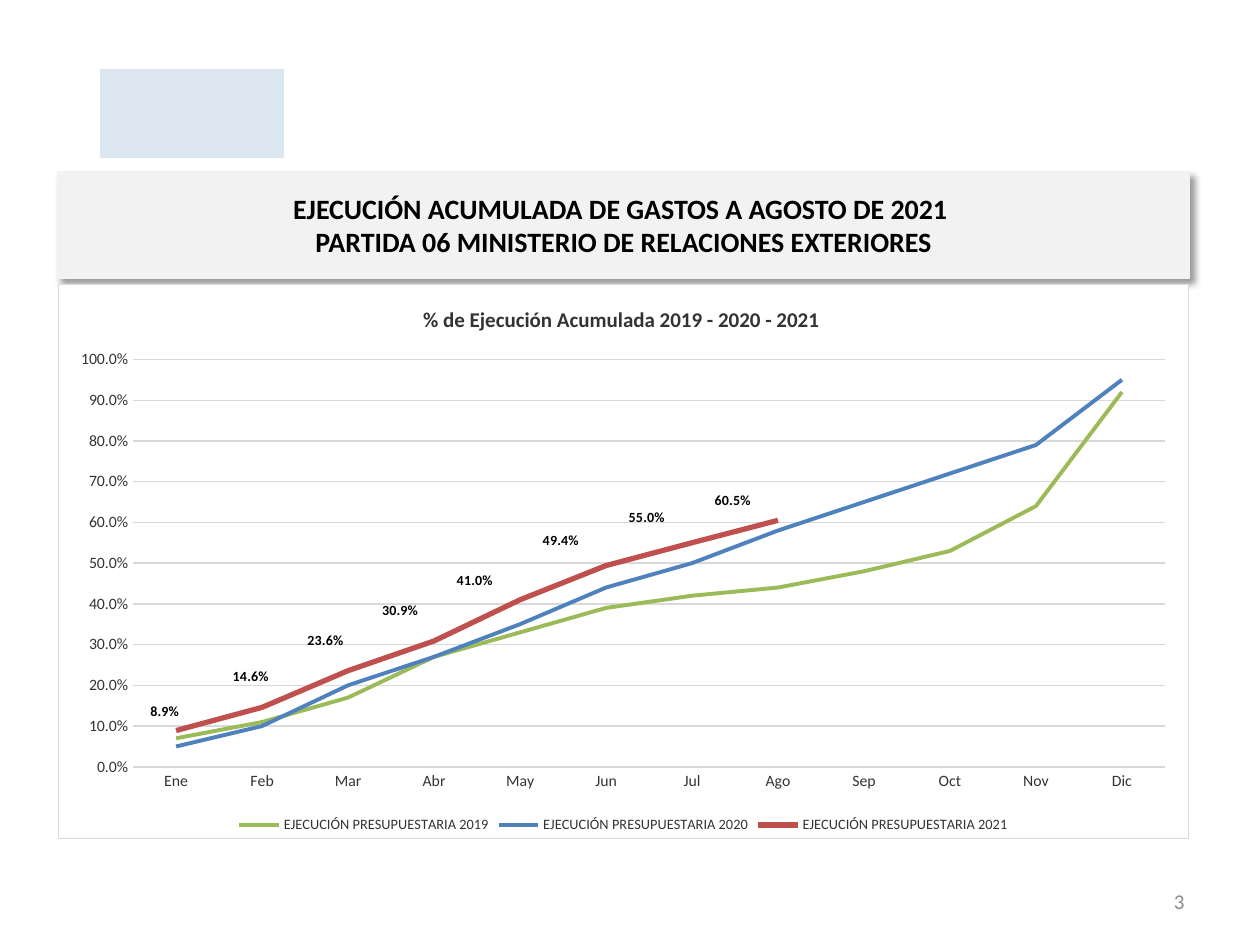
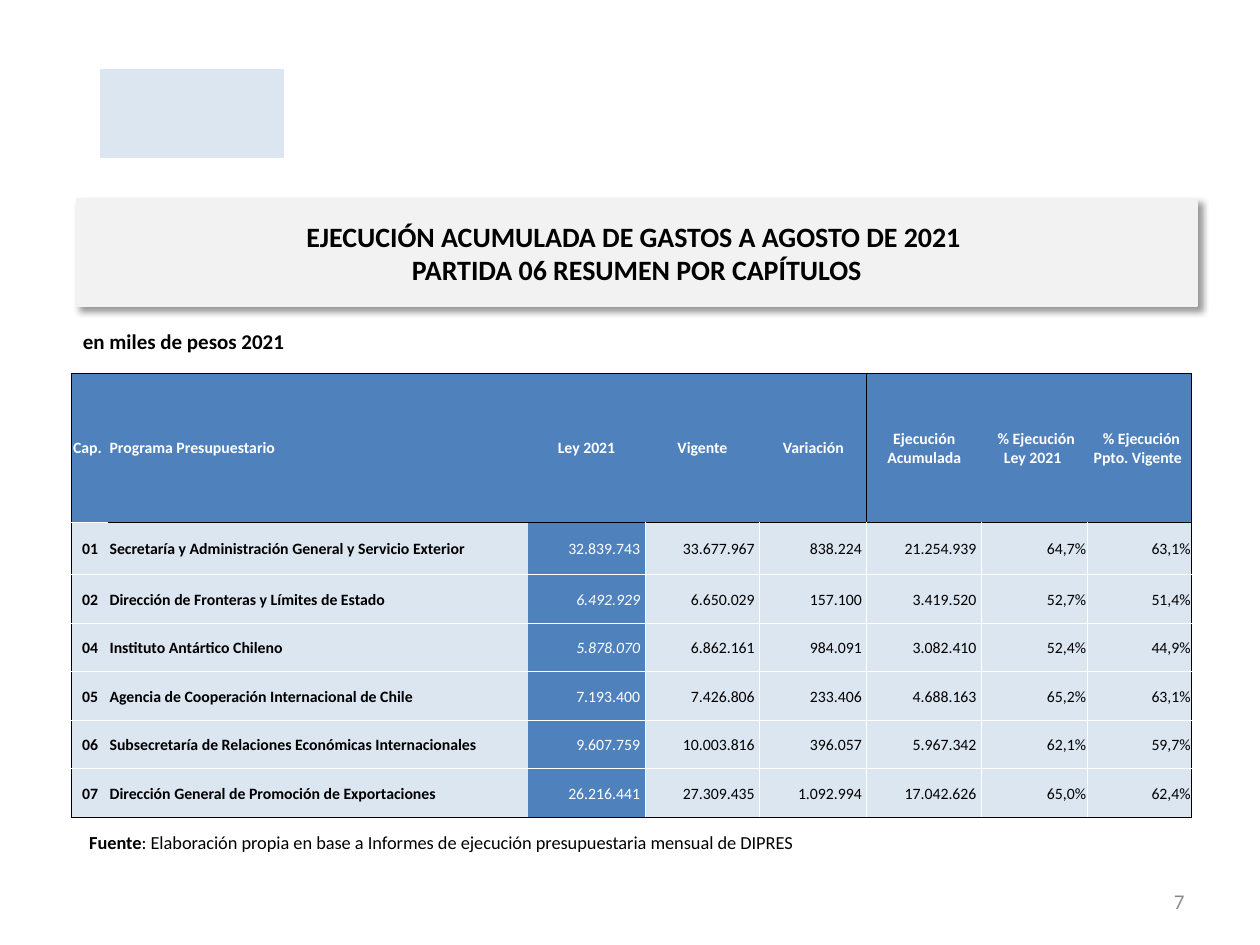
from pptx import Presentation, oxml
from pptx import util as u
from pptx.chart import data as chart_data
from pptx.dml.color import RGBColor
from pptx.enum import chart as charts
from pptx.enum import shapes, text
from pptx.oxml import ns

BLACK = RGBColor(0x00, 0x00, 0x00)
WHITE = RGBColor(0xFF, 0xFF, 0xFF)
BLUE = RGBColor(0x4F, 0x81, 0xBD)
GREEN = RGBColor(0x9B, 0xBB, 0x59)
RED = RGBColor(0xC0, 0x50, 0x4D)
PALE_BLUE = RGBColor(0xDC, 0xE6, 0xF1)
BAND_GRAY = RGBColor(0xF2, 0xF2, 0xF2)
RULE_GRAY = RGBColor(0xD9, 0xD9, 0xD9)
PAGE_GRAY = RGBColor(0x8C, 0x8C, 0x8C)
DARK_GRAY = RGBColor(0x33, 0x33, 0x33)

LEFT = text.PP_ALIGN.LEFT
CENTER = text.PP_ALIGN.CENTER
RIGHT = text.PP_ALIGN.RIGHT
BODY_FONT = "Calibri"
BAND_TITLE = "EJECUCIÓN ACUMULADA DE GASTOS A AGOSTO DE 2021 "

MONTHS = ["Ene", "Feb", "Mar", "Abr", "May", "Jun", "Jul", "Ago", "Sep", "Oct", "Nov", "Dic"]
YEARS = [
    ("2019", GREEN, 2.25, [0.07, 0.11, 0.17, 0.27, 0.33, 0.39, 0.42, 0.44, 0.48, 0.53, 0.64, 0.92]),
    ("2020", BLUE, 2.25, [0.05, 0.1, 0.2, 0.27, 0.35, 0.44, 0.5, 0.58, 0.65, 0.72, 0.79, 0.95]),
    ("2021", RED, 3, [0.089, 0.146, 0.236, 0.309, 0.41, 0.494, 0.55, 0.605]),
]
LABEL_SHIFTS = [(-0.01, -0.01), (-0.01, -0.03), (-0.02, -0.03), (-0.03, -0.03),
                (-0.04, -0.01), (-0.04, -0.02), (-0.04, -0.02), (-0.04, -0.01)]

HEADINGS = ["Cap.", "Programa Presupuestario", "Ley 2021", "Vigente", "Variación",
            "Ejecución Acumulada", " % Ejecución Ley 2021 ", " % Ejecución Ppto. Vigente "]
CHAPTERS = [
    ["01", "Secretaría y Administración General y Servicio Exterior",
     "32.839.743", "33.677.967", "838.224", "21.254.939", "64,7%", "63,1%"],
    ["02", "Dirección de Fronteras y Límites de Estado",
     "6.492.929", "6.650.029", "157.100", "3.419.520", "52,7%", "51,4%"],
    ["04", "Instituto Antártico Chileno",
     "5.878.070", "6.862.161", "984.091", "3.082.410", "52,4%", "44,9%"],
    ["05", "Agencia de Cooperación Internacional de Chile",
     "7.193.400", "7.426.806", "233.406", "4.688.163", "65,2%", "63,1%"],
    ["06", "Subsecretaría de Relaciones Económicas Internacionales",
     "9.607.759", "10.003.816", "396.057", "5.967.342", "62,1%", "59,7%"],
    ["07", "Dirección General de Promoción de Exportaciones",
     "26.216.441", "27.309.435", "1.092.994", "17.042.626", "65,0%", "62,4%"],
]
ITALIC_CHAPTERS = ("02", "04")
COLUMN_WIDTHS = [0.29, 3.33, 0.93, 0.91, 0.85, 0.91, 0.84, 0.83]
ROW_HEIGHTS = [1.19, 0.41, 0.39, 0.38, 0.39, 0.38, 0.39]


def make_xml(markup):
    return oxml.parse_xml(f"<root {ns.nsdecls('a', 'c')}>{markup}</root>")[0]


def set_font(font, size, color, bold=False, italic=False):
    font.name, font.size = BODY_FONT, u.Pt(size)
    font.bold, font.italic = bold, italic
    font.color.rgb = color


def write(paragraph, words, align=LEFT, **style):
    paragraph.alignment = align
    for number, line in enumerate(words.split("\n")):
        if number:
            paragraph.add_line_break()
        run = paragraph.add_run()
        run.text = line
        set_font(run.font, **style)


def manual_layout(inner=False, **parts):
    target = '<c:layoutTarget val="inner"/>' if inner else ""
    modes = '<c:xMode val="edge"/><c:yMode val="edge"/>' if inner else ""
    values = "".join(f'<c:{key} val="{value}"/>' for key, value in parts.items())
    return make_xml(f"<c:layout><c:manualLayout>{target}{modes}{values}</c:manualLayout></c:layout>")


def border_color(row, column, side):
    last_row, last_column = len(CHAPTERS), len(HEADINGS) - 1
    if side == "T":
        if row == 0:
            return BLACK
        return BLACK if row == 1 and column else WHITE
    if side == "B":
        return BLACK if row == last_row or (row == 0 and column) else WHITE
    edge = column if side == "L" else column + 1
    if edge in (0, last_column + 1) or (row == 0 and edge == 5):
        return BLACK
    return WHITE if row and edge > 2 else None


class Deck:
    def __init__(self):
        self.presentation = Presentation()
        self.presentation.slide_width = u.Inches(10)
        self.presentation.slide_height = u.Inches(7.5)
        self.slide = None

    def start_slide(self, subtitle, page, left, top, width):
        self.slide = self.presentation.slides.add_slide(self.presentation.slide_layouts[6])
        self.rectangle(0.8, 0.55, 1.45, 0.7, PALE_BLUE)
        self.title_band(BAND_TITLE + "\n" + subtitle, left, top, width)
        frame = self.text_box(7.17, 6.95, 2.33, 0.4)
        frame.vertical_anchor = text.MSO_ANCHOR.MIDDLE
        write(frame.paragraphs[0], page, align=RIGHT, size=12, color=PAGE_GRAY)

    def text_box(self, left, top, width, height):
        box = self.slide.shapes.add_textbox(*map(u.Inches, (left, top, width, height)))
        box.text_frame.word_wrap = True
        return box.text_frame

    def rectangle(self, left, top, width, height, color):
        shape = self.slide.shapes.add_shape(
            shapes.MSO_SHAPE.RECTANGLE, *map(u.Inches, (left, top, width, height)))
        shape.fill.solid()
        shape.fill.fore_color.rgb = color
        shape.line.color.rgb = color
        shape.line.width = u.Pt(0.75)
        shape.shadow.inherit = False
        return shape

    def title_band(self, words, left, top, width):
        band = self.rectangle(left, top, width, 0.85, BAND_GRAY)
        band._element.spPr.find(ns.qn("a:effectLst")).append(make_xml(
            f'<a:outerShdw blurRad="{u.Pt(4)}" dist="{u.Pt(3)}" dir="2700000" algn="tl" rotWithShape="0">'
            '<a:srgbClr val="000000"><a:alpha val="40000"/></a:srgbClr></a:outerShdw>'))
        band.text_frame.word_wrap = True
        band.text_frame.vertical_anchor = text.MSO_ANCHOR.MIDDLE
        write(band.text_frame.paragraphs[0], words, align=CENTER, size=16, color=BLACK, bold=True)

    def line_chart(self, title, left, top, width, height):
        content = chart_data.CategoryChartData(number_format="0.0%")
        content.categories = MONTHS
        for year, _, _, values in YEARS:
            content.add_series(f"EJECUCIÓN PRESUPUESTARIA {year}", values)
        chart = self.slide.shapes.add_chart(
            charts.XL_CHART_TYPE.LINE, *map(u.Inches, (left, top, width, height)), content).chart
        set_font(chart.font, 10, BLACK)
        chart.has_title = True
        write(chart.chart_title.text_frame.paragraphs[0], title, align=CENTER,
              size=12, color=DARK_GRAY, bold=True)
        chart.has_legend = True
        chart.legend.position = charts.XL_LEGEND_POSITION.BOTTOM
        chart.legend.include_in_layout = False
        set_font(chart.legend.font, 8.2, DARK_GRAY)
        self.chart_axes(chart)
        self.chart_frame(chart)
        for series, (_, color, weight, _) in zip(chart.plots[0].series, YEARS):
            series.smooth = False
            series.marker.style = charts.XL_MARKER_STYLE.NONE
            series.format.line.color.rgb = color
            series.format.line.width = u.Pt(weight)
        self.point_labels(chart.plots[0].series[-1])

    def chart_axes(self, chart):
        for axis in (chart.category_axis, chart.value_axis):
            axis.major_tick_mark = axis.minor_tick_mark = charts.XL_TICK_MARK.NONE
            set_font(axis.tick_labels.font, 9, DARK_GRAY)
        chart.category_axis.format.line.color.rgb = RULE_GRAY
        values = chart.value_axis
        values.minimum_scale, values.maximum_scale, values.major_unit = 0, 1, 0.1
        values.tick_labels.number_format = "0.0%"
        values.tick_labels.number_format_is_linked = False
        values.format.line.fill.background()
        values.has_major_gridlines = True
        values.major_gridlines.format.line.color.rgb = RULE_GRAY
        values.major_gridlines.format.line.width = u.Pt(0.75)

    def chart_frame(self, chart):
        chart.plots[0].vary_by_categories = False
        space = chart.element
        space.find(ns.qn("c:date1904")).addnext(make_xml('<c:roundedCorners val="0"/>'))
        body = space.find(ns.qn("c:chart"))
        body.addnext(make_xml(
            f'<c:spPr><a:solidFill><a:srgbClr val="{WHITE}"/></a:solidFill><a:ln w="{u.Pt(0.75)}">'
            f'<a:solidFill><a:srgbClr val="{RULE_GRAY}"/></a:solidFill></a:ln></c:spPr>'))
        plot_area = body.find(ns.qn("c:plotArea"))
        for layout in plot_area.findall(ns.qn("c:layout")):
            plot_area.remove(layout)
        plot_area.insert(0, manual_layout(inner=True, x=0.066, y=0.136, w=0.913, h=0.735))

    def point_labels(self, series):
        labels = series.data_labels
        labels.show_value = True
        labels.number_format = "0.0%"
        labels.number_format_is_linked = False
        set_font(labels.font, 8, BLACK, bold=True)
        for leader_lines in labels._element.findall(ns.qn("c:showLeaderLines")):
            leader_lines.set("val", "0")
        for number, (x, y) in enumerate(LABEL_SHIFTS):
            label = series.points[number].data_label
            set_font(label.font, 8, BLACK, bold=True)
            label.position = charts.XL_LABEL_POSITION.ABOVE
            index = labels._element.findall(ns.qn("c:dLbl"))[number].find(ns.qn("c:idx"))
            index.addnext(make_xml('<c:numFmt formatCode="0.0%" sourceLinked="0"/>'))
            index.addnext(manual_layout(x=x, y=y))

    def budget_table(self, left, top):
        rows = [HEADINGS] + CHAPTERS
        table = self.slide.shapes.add_table(
            len(rows), len(HEADINGS), u.Inches(left), u.Inches(top),
            u.Inches(sum(COLUMN_WIDTHS)), u.Inches(sum(ROW_HEIGHTS))).table
        table.first_row = table.horz_banding = False
        for column, width in zip(table.columns, COLUMN_WIDTHS):
            column.width = u.Inches(width)
        for row, height in zip(table.rows, ROW_HEIGHTS):
            row.height = u.Inches(height)
        for row, values in enumerate(rows):
            for column, value in enumerate(values):
                self.table_cell(table.cell(row, column), row, column, value, values[0])

    def table_cell(self, cell, row, column, value, chapter):
        header, law = row == 0, column == 2
        cell.margin_left = cell.margin_top = u.Inches(0.01)
        cell.margin_right = u.Inches(0.04 if row and 2 <= column <= 5 else 0.01)
        cell.margin_bottom = 0
        cell.vertical_anchor = text.MSO_ANCHOR.MIDDLE
        cell.fill.solid()
        cell.fill.fore_color.rgb = BLUE if header or law else PALE_BLUE
        if column == 1 or (header and column == 0):
            align = LEFT
        else:
            align = CENTER if header or column == 0 else RIGHT
        write(cell.text_frame.paragraphs[0], value, align=align, size=9,
              color=WHITE if header or law else BLACK, bold=header or column < 2,
              italic=law and chapter in ITALIC_CHAPTERS)
        properties = cell._tc.get_or_add_tcPr()
        for position, side in enumerate("LRTB"):
            color = border_color(row, column, side)
            fill = f'<a:solidFill><a:srgbClr val="{color}"/></a:solidFill>' if color is not None else "<a:noFill/>"
            properties.insert(position, make_xml(f'<a:ln{side} w="{u.Pt(0.5)}">{fill}</a:ln{side}>'))


def main():
    deck = Deck()
    deck.start_slide("PARTIDA 06 MINISTERIO DE RELACIONES EXTERIORES", "3", 0.46, 1.36, 8.98)
    deck.line_chart("% de Ejecución Acumulada 2019 - 2020 - 2021 ", 0.46, 2.25, 8.98, 4.41)

    deck.start_slide("PARTIDA 06 RESUMEN POR CAPÍTULOS", "7", 0.61, 1.58, 8.89)
    unit_note = deck.text_box(0.56, 2.56, 8.6, 0.22).paragraphs[0]
    write(unit_note, "en miles de pesos 2021", size=12, color=BLACK, bold=True)
    deck.budget_table(0.57, 2.96)
    source = deck.text_box(0.61, 6.55, 8.65, 0.26).paragraphs[0]
    write(source, "Fuente", size=10.5, color=BLACK, bold=True)
    write(source, ": Elaboración propia en base a Informes de ejecución presupuestaria mensual de DIPRES",
          size=10.5, color=BLACK)
    deck.presentation.save("out.pptx")


if __name__ == "__main__":
    main()
